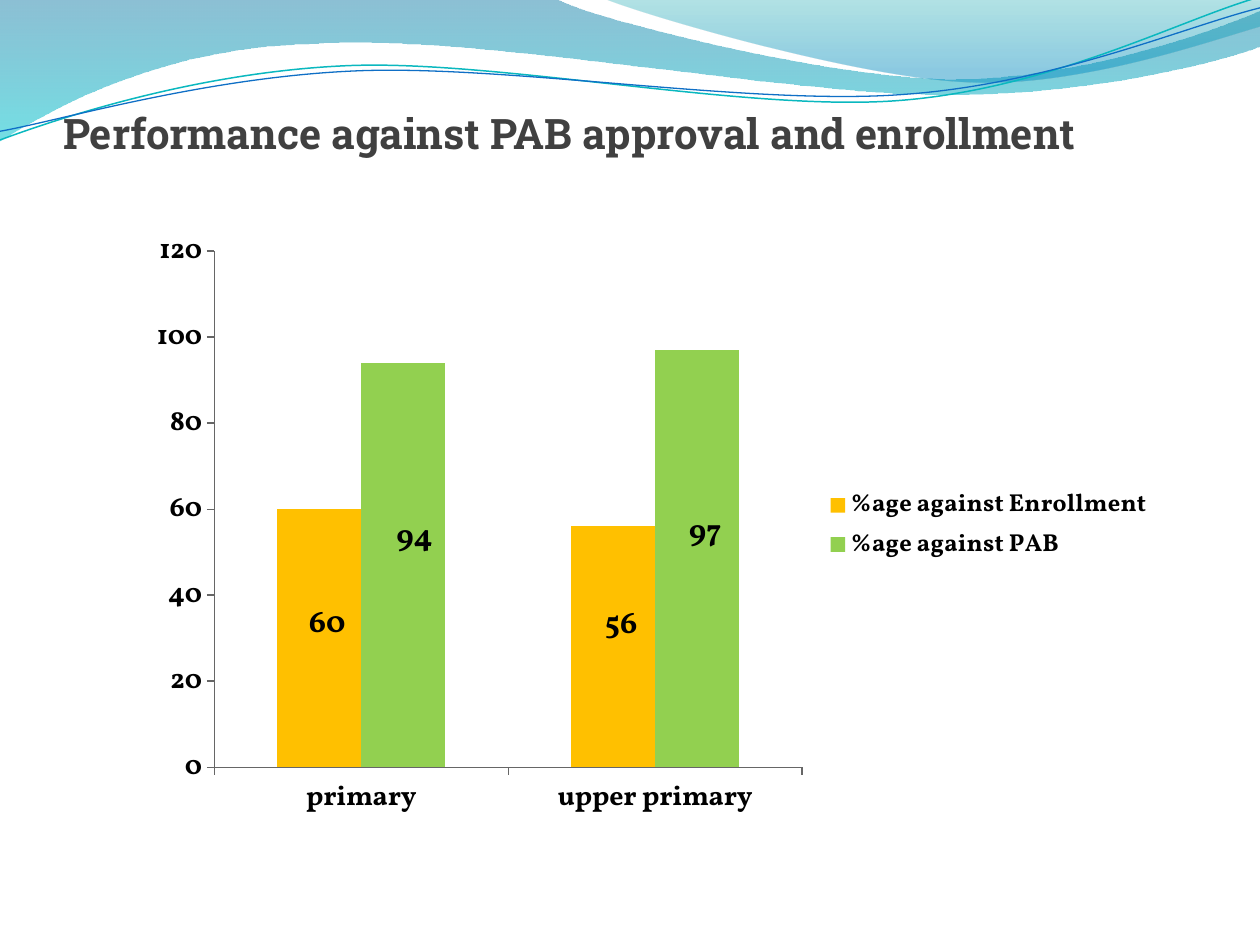
import math

from pptx import Presentation
from pptx import util as u
from pptx.chart import data
from pptx.dml import color
from pptx.enum import chart as ce, text
from pptx.oxml import parse_xml
from pptx.oxml.ns import nsdecls, qn

Pt = u.Pt
HUES = {
    "ink": "404040", "black": "000000", "white": "FFFFFF", "axis": "666666",
    "deep": "0074A1", "aqua": "00C6CF", "teal": "00A1A9", "sky": "008BBF",
    "cyan": "0AB8BF", "blue": "0F6FC6", "gold": "FFC000", "green": "92D050",
}
TILT = 2.7


def rgb(name):
    return color.RGBColor.from_string(HUES[name])


def pairs(part):
    return list(zip(part[::2], part[1::2]))


def spin(part, hub):
    cos, sin = math.cos(math.radians(TILT)), math.sin(math.radians(TILT))
    out = []
    for x, y in pairs(part):
        dx, dy = x - hub[0], y - hub[1]
        out += [hub[0] + dx * cos - dy * sin, hub[1] + dx * sin + dy * cos]
    return out


class Deck:
    head = "Roboto Slab"
    body = "Vollkorn"

    def __init__(self):
        self.prs = Presentation()
        self.prs.slide_width, self.prs.slide_height = Pt(720), Pt(540)
        self.slide = self.prs.slides.add_slide(self.prs.slide_layouts[5])

    def style(self, font, size, hue="black", bold=True, face=None):
        font.name, font.size, font.bold = face or self.body, Pt(size), bold
        font.color.rgb = rgb(hue)

    def curve(self, parts, close):
        pts = [(x * 100, y * 100) for part in parts for x, y in pairs(part)]
        pen = self.slide.shapes.build_freeform(*pts[0], scale=Pt(1) / 100)
        pen.add_line_segments(pts[1:], close=close)
        shape = pen.convert_to_shape()
        shape.shadow.inherit = False
        route = next(shape.element.spPr.iter(qn("a:path")))
        lines = iter(route.findall(qn("a:lnTo")))
        for part in parts[1:]:
            step = [next(lines) for _ in pairs(part)]
            if len(step) == 3:
                bend = parse_xml(f'<a:cubicBezTo {nsdecls("a")}/>')
                step[0].addprevious(bend)
                for line in step:
                    bend.append(line[0])
                    route.remove(line)
        return shape

    def wave(self, parts, stops):
        shape = self.curve(parts, True)
        shape.line.fill.background()
        shape.fill.gradient()
        shape.fill.gradient_angle = 270
        for stop, (pos, hue, _) in zip(shape.fill.gradient_stops, stops):
            stop.position, stop.color.rgb = pos, rgb(hue)
        tints = shape.element.spPr.iter(qn("a:srgbClr"))
        for tint, (_, _, alpha) in zip(tints, stops):
            tint.append(parse_xml(f'<a:alpha {nsdecls("a")} val="{alpha * 1000}"/>'))

    def thread(self, parts, hub, hue, width):
        shape = self.curve([spin(part, hub) for part in parts], False)
        shape.rotation = 360 - TILT
        shape.fill.background()
        shape.line.color.rgb, shape.line.width = rgb(hue), Pt(width)

    def title(self, words, box):
        shape = self.slide.shapes.title
        shape.element.getparent().append(shape.element)
        shape.left, shape.top, shape.width, shape.height = map(Pt, box)
        frame = shape.text_frame
        frame.text = words
        frame.vertical_anchor = text.MSO_ANCHOR.BOTTOM
        frame.auto_size = text.MSO_AUTO_SIZE.NONE
        frame.margin_left = frame.margin_right = frame.margin_bottom = 0
        para = frame.paragraphs[0]
        para.alignment = text.PP_ALIGN.LEFT
        self.style(para.font, 24, "ink", face=self.head)

    def layout(self, **vals):
        tags = "".join(f'<c:{k} val="{v}"/>' for k, v in vals.items())
        return parse_xml(f'<c:layout {nsdecls("c")}><c:manualLayout>{tags}'
                         '</c:manualLayout></c:layout>')

    def axis(self, axis):
        self.style(axis.tick_labels.font, 16)
        axis.format.line.color.rgb = rgb("axis")
        axis.format.line.width = Pt(0.75)
        axis.major_tick_mark = ce.XL_TICK_MARK.OUTSIDE

    def label(self, series, shifts, wide, high):
        for i in range(len(shifts)):
            tag = series.points[i].data_label
            self.style(tag.font, 18)
            tag.position = ce.XL_LABEL_POSITION.CENTER
        for tag, (dx, dy) in zip(series._element.iter(qn("c:dLbl")), shifts):
            tag.insert(1, self.layout(x=dx / wide, y=dy / high))

    def bars(self, box, inner, cats, rows):
        feed = data.CategoryChartData(number_format="0")
        feed.categories = cats
        for name, vals, _, _ in rows:
            feed.add_series(name, vals)
        kind = ce.XL_CHART_TYPE.COLUMN_CLUSTERED
        chart = self.slide.shapes.add_chart(kind, *map(Pt, box), feed).chart
        wide, high = box[2:]
        chart.has_title = False
        self.style(chart.font, 10, bold=False)
        plot = chart.plots[0]
        plot.gap_width, plot.overlap, plot.vary_by_categories = 150, 0, False
        for series, (_, _, hue, shifts) in zip(plot.series, rows):
            series.format.fill.solid()
            series.format.fill.fore_color.rgb = rgb(hue)
            self.label(series, shifts, wide, high)
        self.axis(chart.category_axis)
        scale = chart.value_axis
        self.axis(scale)
        scale.minimum_scale, scale.maximum_scale, scale.major_unit = 0, 120, 20
        scale.has_major_gridlines = True
        scale.major_gridlines.format.line.color.rgb = rgb("white")
        scale.major_gridlines.format.line.width = Pt(0.75)
        chart.has_legend = True
        chart.legend.position = ce.XL_LEGEND_POSITION.RIGHT
        chart.legend.include_in_layout = False
        self.style(chart.legend.font, 14)
        area = chart._chartSpace.chart.plotArea
        for old in area.findall(qn("c:layout")):
            area.remove(old)
        x, y, w, h = inner
        area.insert(0, self.layout(layoutTarget="inner", xMode="edge", yMode="edge",
                                   x=x / wide, y=y / high, w=w / wide, h=h / high))


def main():
    deck = Deck()
    deck.wave([
        (0, 0), (317, -1), (343, 12, 478, 45, 546, 45), (614, 45, 690, 19, 720, 6),
        (721, 26), (708, 32, 626, 55, 537, 54), (448, 54, 275, 20, 185, 24.5),
        (93, 26, 33, 60, -1, 81), (0, 0)], [(0, "deep", 45), (1, "aqua", 55)])
    deck.wave([
        (345, -1), (366, 8, 491, 45, 554, 47), (616, 50, 692, 23, 720, 15),
        (720, 0), (345, -1)], [(0, "teal", 30), (0.8, "sky", 45)])
    deck.thread([
        (0, 80), (35, 67, 114, 41, 199, 37.5), (284, 34, 427, 64, 513, 57.5),
        (600, 51, 675, 11, 719, -1.5)], (359.3, 41.4), "cyan", 0.85)
    deck.thread([
        (0, 75), (34, 69, 118, 44, 204, 40.5), (290, 37, 430, 60.5, 516, 54),
        (602, 48, 677.5, 15, 720, 4.5)], (359.6, 42.5), "blue", 0.75)
    deck.title("Performance against PAB approval and enrollment", (36, 55.5, 648, 34.5))
    deck.bars((78, 126, 588, 348), (44.4, 17.5, 336, 295), ["primary", "upper primary"], [
        ("%age against Enrollment", (60, 56), "gold", [(4.6, -7.5), (4.6, -12)]),
        ("%age against PAB", (94, 97), "green", [(6.5, -15), (4.6, -14.3)])])
    deck.prs.save("out.pptx")


if __name__ == "__main__":
    main()
